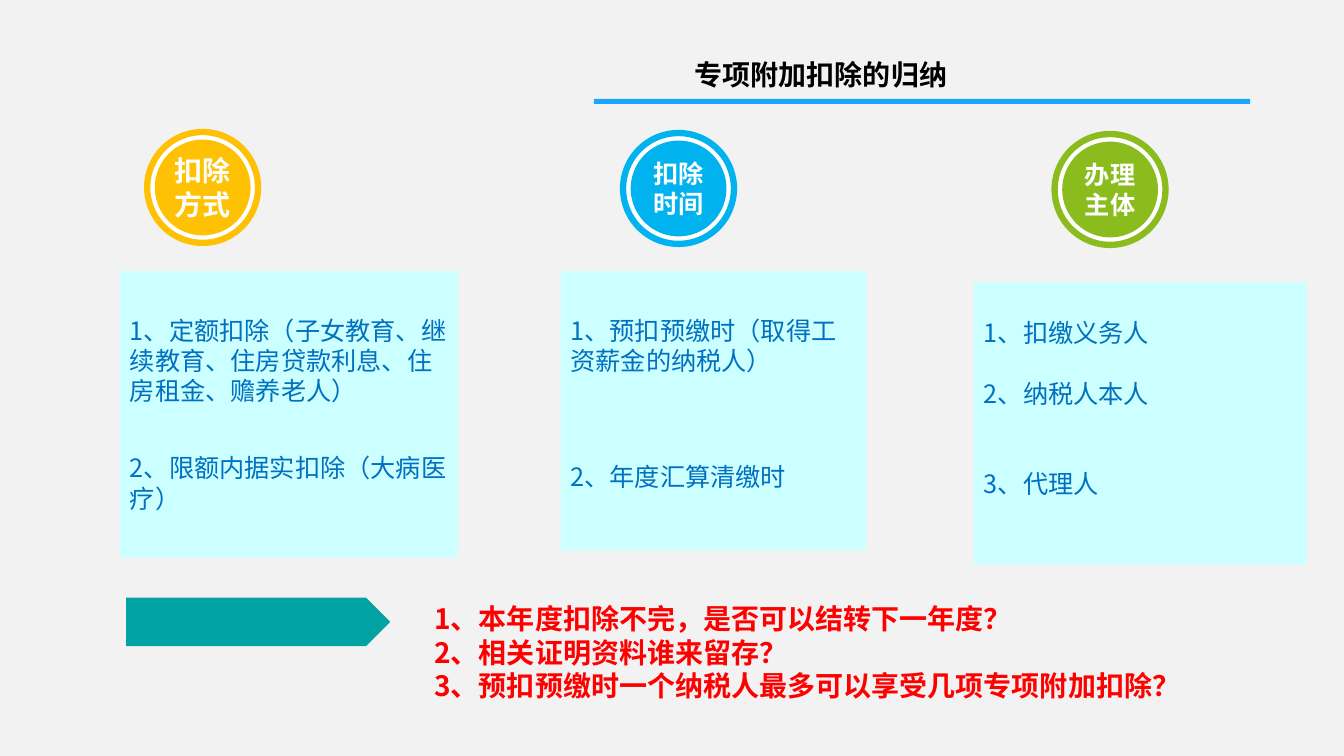
"""Build a slide that sums up the special additional deductions."""
from lxml import etree
from pptx import Presentation
from pptx import util as u
from pptx.dml.color import RGBColor
from pptx.enum import shapes, text
from pptx.oxml.ns import qn

COLORS = {
    "back": "F2F2F2", "rule": "1AA6FF", "white": "FFFFFF", "black": "000000",
    "amber": "FFC104", "sky": "00B3EE", "green": "8ABC1D", "panel": "CCFFFF",
    "body": "0070C0", "arrow": "00A3A1", "question": "FF0000",
}
CJK = "Noto Sans CJK SC"
LEADING = 1.2
BODY_SIZE = 18

BADGES = [
    (2.01, 1.86, "amber", ["扣除", "方式"], 20),
    (6.73, 1.87, "sky", ["扣除", "时间"], 18),
    (11.01, 1.88, "green", ["办理", "主体"], 18),
]
PANELS = [
    ((1.19, 2.69, 3.35, 2.84), 6, [
        (1, "1、定额扣除（子女教育、继续教育、住房贷款利息、住房租金、赡养老人）"),
        (1, "2、限额内据实扣除（大病医疗）")]),
    ((5.56, 2.69, 3.03, 2.77), 6, [
        (1, "1、预扣预缴时（取得工资薪金的纳税人）"),
        (2, "2、年度汇算清缴时")]),
    ((9.66, 2.8, 3.3, 2.8), 0, [
        (1, "1、扣缴义务人"),
        (1, "2、纳税人本人"),
        (2, "3、代理人")]),
]
QUESTIONS = [
    "1、本年度扣除不完，是否可以结转下一年度？",
    "2、相关证明资料谁来留存？",
    "3、预扣预缴时一个纳税人最多可以享受几项专项附加扣除？",
]


def rgb(name):
    """Return the named colour."""
    return RGBColor.from_string(COLORS[name])


def inches(values):
    """Turn numbers into lengths."""
    return [u.Inches(v) for v in values]


def paint(sp, fill, line=None):
    """Give a shape its fill and outline, without a shadow."""
    sp.shadow.inherit = False
    sp.fill.solid()
    sp.fill.fore_color.rgb = rgb(fill)
    if line:
        sp.line.color.rgb = rgb(line)
        sp.line.width = u.Pt(4.5)
    else:
        sp.line.fill.background()


def add_block(s, kind, box, fill, line=None):
    """Add a painted preset shape."""
    sp = s.shapes.add_shape(kind, *inches(box))
    paint(sp, fill, line)
    return sp


def write(sp, lines, size, color, bold=False, font=CJK, wrap=True,
          align=text.PP_ALIGN.LEFT, anchor=text.MSO_ANCHOR.TOP,
          gaps=(), top=0.05):
    """Write formatted paragraphs, with optional gaps in points above them."""
    tf = sp.text_frame
    tf.auto_size = text.MSO_AUTO_SIZE.NONE
    tf.word_wrap = wrap
    tf.vertical_anchor = anchor
    tf.margin_left = tf.margin_right = u.Inches(0.1)
    tf.margin_top, tf.margin_bottom = u.Inches(top), u.Inches(0.05)
    for i, line in enumerate(lines):
        p = tf.add_paragraph() if i else tf.paragraphs[0]
        p.alignment = align
        p.line_spacing = u.Pt(size * LEADING)
        p.space_before = u.Pt(gaps[i] if gaps else 0)
        r = p.add_run()
        r.text = line
        r.font.size = u.Pt(size)
        r.font.bold = bold
        r.font.name = font
        r.font.color.rgb = rgb(color)
        etree.SubElement(r.font._element, qn("a:ea"), typeface=CJK)


def add_badge(s, cx, cy, color, lines, size):
    """Add a ringed disc with a centred label."""
    oval = shapes.MSO_SHAPE.OVAL
    for d, fill, line in ((1.1, "white", color), (0.95, color, None)):
        add_block(s, oval, (cx - d / 2, cy - d / 2, d, d), fill, line)
    w, h = 0.76, 0.77
    label = s.shapes.add_textbox(*inches((cx - w / 2, cy - h / 2, w, h)))
    write(label, lines, size, "white", bold=True, wrap=False,
          align=text.PP_ALIGN.CENTER, anchor=text.MSO_ANCHOR.MIDDLE)


def add_panel(s, box, after, items):
    """Add a panel whose items are set apart by whole lines."""
    gaps = [n * (BODY_SIZE * LEADING + after) + after for n, _ in items]
    top = 0.05 + (gaps[0] - after) / 72
    gaps[0] = 0
    sp = add_block(s, shapes.MSO_SHAPE.RECTANGLE, box, "panel")
    write(sp, [item for _, item in items], BODY_SIZE, "body", gaps=gaps, top=top)


def add_arrow(s, left, top, width, height, tip):
    """Add a block arrow that points right."""
    right, middle = left + width, top + height / 2
    points = [(left, top), (left, top + height), (right - tip, top + height),
              (right, middle), (right - tip, top)]
    start, *rest = [tuple(inches(pt)) for pt in points]
    builder = s.shapes.build_freeform(*start)
    builder.add_line_segments(rest, close=True)
    paint(builder.convert_to_shape(), "arrow")


def add_title(s, line):
    """Place the title above its rule."""
    add_block(s, shapes.MSO_SHAPE.RECTANGLE, (5.89, 0.98, 6.51, 0.05), "rule")
    title = s.shapes.title
    title.left, title.top, title.width, title.height = inches((6.79, 0.52, 4.94, 0.43))
    write(title, [line], 20, "black", bold=True, font="Arial")


def main():
    """Build and save the slide."""
    prs = Presentation()
    prs.slide_width, prs.slide_height = inches((13.33, 7.5))
    s = prs.slides.add_slide(prs.slide_layouts[5])
    s.background.fill.solid()
    s.background.fill.fore_color.rgb = rgb("back")
    add_title(s, "专项附加扣除的归纳")
    for badge in BADGES:
        add_badge(s, *badge)
    for panel in PANELS:
        add_panel(s, *panel)
    add_arrow(s, 1.25, 5.93, 2.62, 0.48, 0.24)
    box = s.shapes.add_textbox(*inches((4.21, 5.92, 8.8, 1.1)))
    write(box, QUESTIONS, 20, "question", bold=True)
    prs.save("out.pptx")


if __name__ == "__main__":
    main()
